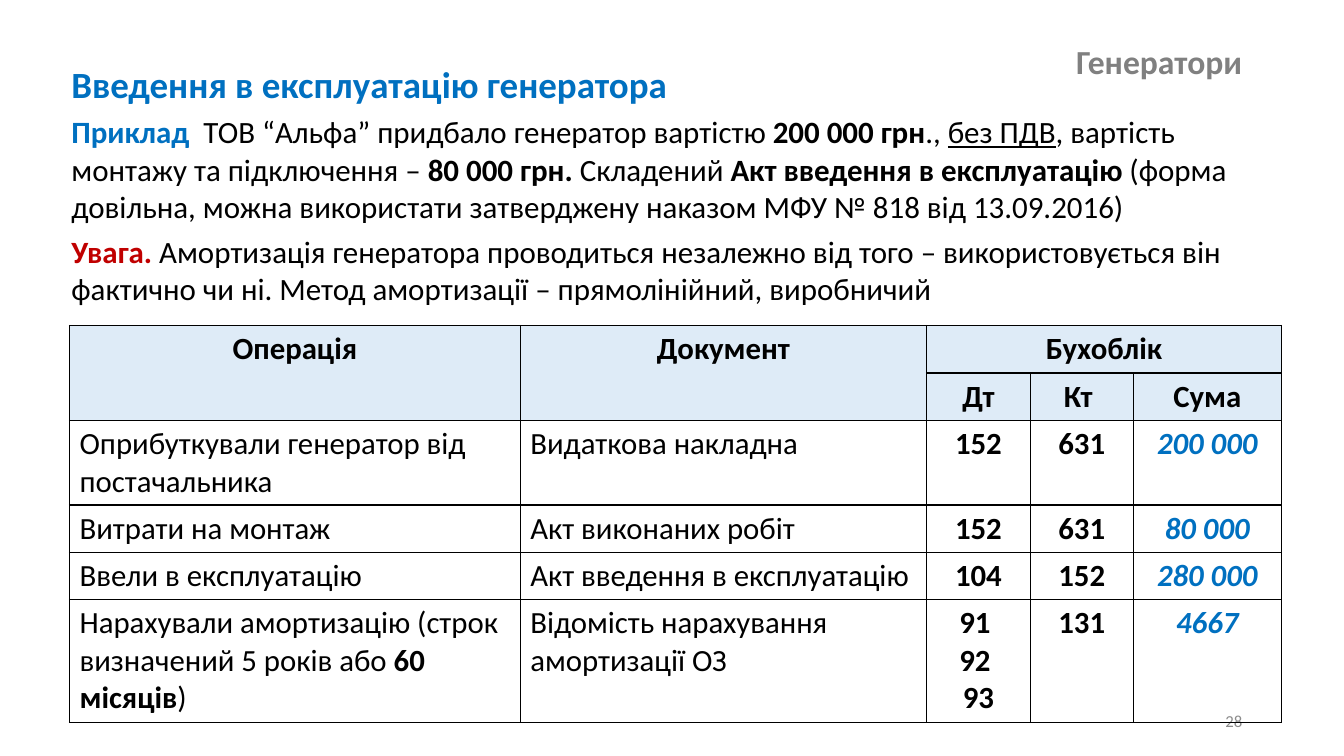
"""Build the slide on putting a generator into operation."""
import pptx
import pptx.dml.color
import pptx.enum.text
import pptx.oxml
import pptx.oxml.ns
import pptx.util

ALIGN = pptx.enum.text.PP_ALIGN
ANCHOR = pptx.enum.text.MSO_ANCHOR
INCH = pptx.util.Inches

WIDTH, HEIGHT = 13.33, 7.5
BLACK, BLUE, RED, GREY, PALE_GREY, HEADER_FILL = (
    "000000", "0070C0", "C00000", "808080", "8C8C8C", "DEEBF7")

PLAIN = {"size": 22, "color": BLACK}
BOLD = {**PLAIN, "bold": True}
AMOUNT = {**BOLD, "color": BLUE, "italic": True}
TEXT = {**PLAIN, "size": 22.1}
STRONG = {**TEXT, "bold": True}
HEADING = {"size": 26.4, "color": BLUE, "bold": True}

TITLE = [("Генератори", {"size": 24, "color": GREY, "bold": True})]
PAGE = [("28", {"size": 12, "color": PALE_GREY})]
BODY = [
    [("Введення в експлуатацію генератора", HEADING)],
    [("Приклад  ", {**STRONG, "color": BLUE}),
     ("ТОВ “Альфа” придбало генератор вартістю ", TEXT),
     ("200 000 грн", STRONG),
     ("., ", TEXT),
     ("без ПДВ", {**TEXT, "underline": True}),
     (", вартість монтажу та підключення – ", TEXT),
     ("80 000 грн. ", STRONG),
     ("Складений ", TEXT),
     ("Акт введення в експлуатацію", STRONG),
     (" (форма довільна, можна використати затверджену наказом МФУ № 818 від 13.09.2016)", TEXT)],
    [("Увага. ", {**STRONG, "color": RED}),
     ("Амортизація генератора проводиться незалежно від того – використовується він "
      "фактично чи ні. Метод амортизації – прямолінійний, виробничий", TEXT)],
]

COLUMNS = [4.47, 4.03, 1.03, 1.02, 1.47]
ROWS = [0.47, 0.47, 0.84, 0.47, 0.47, 1.22]
TABLE_LEFT, TABLE_TOP = 0.69, 3.23
HEADER_ROWS = 2
MERGES = [((0, 0), (1, 0)), ((0, 1), (1, 1)), ((0, 2), (0, 4))]
ENTRIES = [
    ["Операція", "Документ", "Бухоблік", "", ""],
    ["", "", "Дт", "Кт ", "Сума"],
    ["Оприбуткували генератор від постачальника", "Видаткова накладна",
     "152", "631", "200 000"],
    ["Витрати на монтаж", "Акт виконаних робіт", "152", "631", "80 000"],
    ["Ввели в експлуатацію", "Акт введення в експлуатацію", "104", "152", "280 000"],
    [[("Нарахували амортизацію (строк визначений 5 років або ", PLAIN),
      ("60 місяців", BOLD), (")", PLAIN)],
     "Відомість нарахування амортизації ОЗ", "91 \n92 \n93", "131", "4667"],
]
COLUMN_STYLES = [PLAIN, PLAIN, BOLD, BOLD, AMOUNT]


def rgb(value):
    return pptx.dml.color.RGBColor.from_string(value)


def write(frame, paragraphs, **layout):
    for index, runs in enumerate(paragraphs):
        paragraph = frame.paragraphs[0] if index == 0 else frame.add_paragraph()
        for name, value in layout.items():
            setattr(paragraph, name, value)
        for text, style in runs:
            run = paragraph.add_run()
            run.text = text
            run.font.name = "Calibri"
            for name, value in {"bold": False, **style}.items():
                if name == "color":
                    run.font.color.rgb = rgb(value)
                else:
                    setattr(run.font, name, pptx.util.Pt(value) if name == "size" else value)


def add_text(slide, left, top, width, height, anchor):
    frame = slide.shapes.add_textbox(*map(INCH, (left, top, width, height))).text_frame
    frame.word_wrap = True
    frame.vertical_anchor = anchor
    return frame


def add_borders(cell):
    properties = cell._tc.get_or_add_tcPr()
    for side in ("lnL", "lnR", "lnT", "lnB"):
        properties.append(pptx.oxml.parse_xml(
            f'<a:{side} {pptx.oxml.ns.nsdecls("a")} w="12700"><a:solidFill>'
            f'<a:srgbClr val="{BLACK}"/></a:solidFill></a:{side}>'))


def add_entries(slide):
    table = slide.shapes.add_table(
        len(ROWS), len(COLUMNS),
        *map(INCH, (TABLE_LEFT, TABLE_TOP, sum(COLUMNS), sum(ROWS)))).table
    table.first_row = table.horz_banding = False
    for column, width in zip(table.columns, COLUMNS):
        column.width = INCH(width)
    for row, height in zip(table.rows, ROWS):
        row.height = INCH(height)
    for start, end in MERGES:
        table.cell(*start).merge(table.cell(*end))
    for row, entries in enumerate(ENTRIES):
        is_header = row < HEADER_ROWS
        for column, entry in enumerate(entries):
            cell = table.cell(row, column)
            add_borders(cell)
            if is_header:
                cell.fill.solid()
                cell.fill.fore_color.rgb = rgb(HEADER_FILL)
            else:
                cell.fill.background()
            style = BOLD if is_header else COLUMN_STYLES[column]
            centred = is_header or column > 1
            if isinstance(entry, str):
                paragraphs = [[(line, style)] for line in entry.split("\n") if line]
            else:
                paragraphs = [entry]
            write(cell.text_frame, paragraphs,
                  alignment=ALIGN.CENTER if centred else ALIGN.LEFT)


def main():
    presentation = pptx.Presentation()
    presentation.slide_width, presentation.slide_height = INCH(WIDTH), INCH(HEIGHT)
    slide = presentation.slides.add_slide(presentation.slide_layouts[5])

    title = slide.shapes.title
    position = {"left": 7.36, "top": 0.4, "width": 5.06, "height": 0.47}
    for name, value in position.items():
        setattr(title, name, INCH(value))
    title.text_frame.vertical_anchor = ANCHOR.MIDDLE
    write(title.text_frame, [TITLE], alignment=ALIGN.RIGHT, line_spacing=0.9)

    body = add_text(slide, 0.61, 0.68, 12.11, 2.41, ANCHOR.TOP)
    write(body, BODY, space_before=pptx.util.Pt(6))
    heading = body.paragraphs[0]
    heading.line_spacing = 0.7
    heading.space_before = pptx.util.Pt(0)

    page = add_text(slide, 9.42, 6.95, 3, 0.4, ANCHOR.MIDDLE)
    write(page, [PAGE], alignment=ALIGN.RIGHT)
    add_entries(slide)
    presentation.save("out.pptx")


if __name__ == "__main__":
    main()
